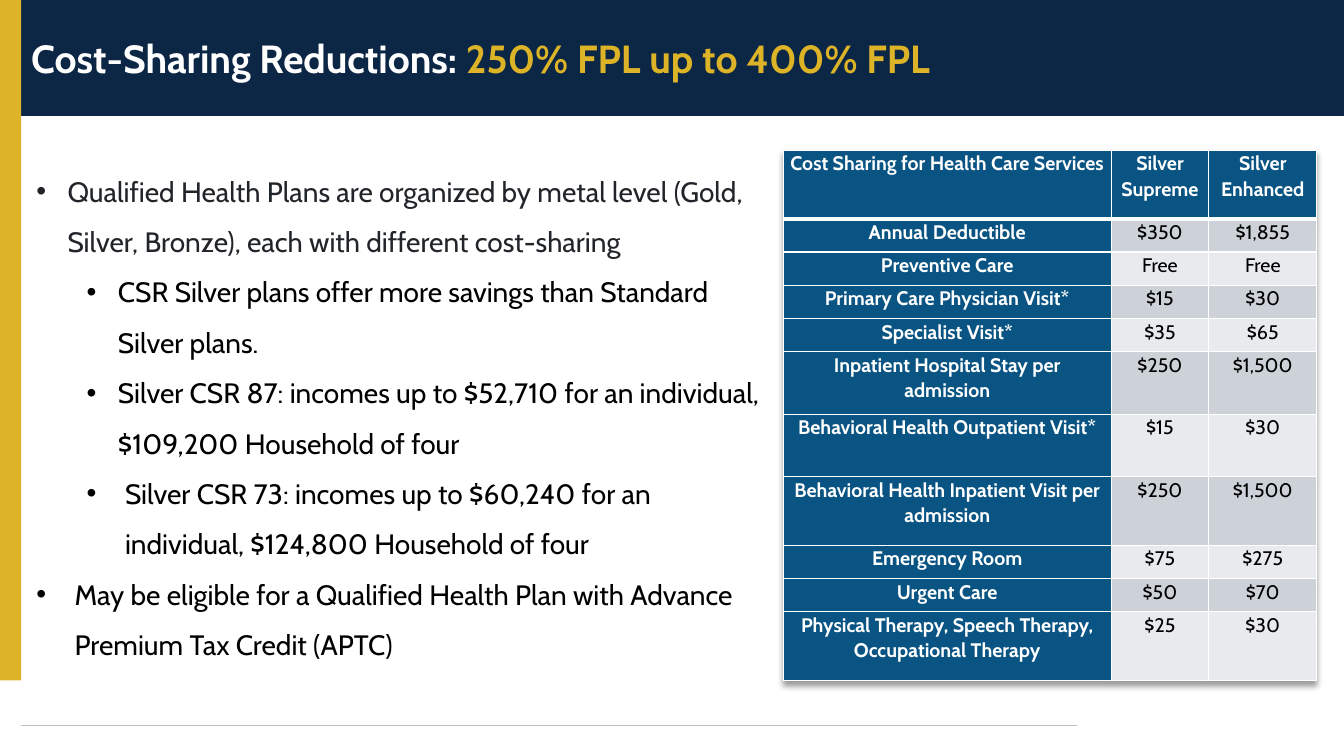
"""Build the slide on cost-sharing reductions with its plan table."""
import pptx
import pptx.util
import pptx.dml.color
import pptx.enum.shapes
import pptx.enum.text
import pptx.oxml
import pptx.oxml.ns
from dataclasses import dataclass
from lxml import etree

HEAD = ["Cost-Sharing Reductions: ", "250% FPL up to 400% FPL"]
POINTS = [
    (0, 0.31, 0.31, "Qualified Health Plans are organized by metal level (Gold, Silver, Bronze), "
     "each with different cost-sharing"),
    (1, 0.81, 0.31, "CSR Silver plans offer more savings than Standard Silver plans."),
    (1, 0.81, 0.31, "Silver CSR 87: incomes up to $52,710 for an individual, $109,200 Household of four"),
    (1, 0.88, 0.38, "Silver CSR 73: incomes up to $60,240 for an individual, $124,800 Household of four"),
    (0, 0.38, 0.38, "May be eligible for a Qualified Health Plan with Advance Premium Tax Credit (APTC)"),
]
COSTS = [
    (0.68, "Cost Sharing for Health Care Services", "Silver Supreme", "Silver Enhanced"),
    (0.33, "Annual Deductible", "$350", "$1,855"),
    (0.33, "Preventive Care", "Free", "Free"),
    (0.33, "Primary Care Physician Visit*", "$15", "$30"),
    (0.33, "Specialist Visit*", "$35", "$65"),
    (0.62, "Inpatient Hospital Stay per admission", "$250", "$1,500"),
    (0.62, "Behavioral Health Outpatient Visit*", "$15", "$30"),
    (0.68, "Behavioral Health Inpatient Visit per admission", "$250", "$1,500"),
    (0.33, "Emergency Room", "$75", "$275"),
    (0.33, "Urgent Care", "$50", "$70"),
    (0.68, "Physical Therapy, Speech Therapy, Occupational Therapy", "$25", "$30"),
]
COLS = (3.25, 0.97, 1.07)
WIDE, HIGH = 13.33, 7.5
EDGE, BAND = 0.21, 1.15


@dataclass
class Theme:
    font: str = "Cabin"
    navy: str = "0C2645"
    gold: str = "DDB427"
    blue: str = "0A5483"
    dark: str = "CCD2D8"
    light: str = "E8EAED"
    rule: str = "BFBFBF"
    ink: str = "212529"
    black: str = "000000"
    white: str = "FFFFFF"
    title: int = 28
    body: int = 20
    cell: int = 14


theme = Theme()
inch, pt = pptx.util.Inches, pptx.util.Pt
align = pptx.enum.text.PP_ALIGN
qn = pptx.oxml.ns.qn
NS = 'xmlns:a="http://schemas.openxmlformats.org/drawingml/2006/main"'


def rgb(tone):
    return pptx.dml.color.RGBColor.from_string(tone)


def style(font, size, tone, bold=False):
    font.name, font.size, font.bold = theme.font, pt(size), bold
    font.color.rgb = rgb(tone)


def place(shape, *box):
    shape.left, shape.top, shape.width, shape.height = map(inch, box)


def lift(shape):
    shape.element.getparent().append(shape.element)


def add_bar(slide, tone, *box):
    kind = pptx.enum.shapes.MSO_SHAPE.RECTANGLE
    bar = slide.shapes.add_shape(kind, *map(inch, box))
    bar.shadow.inherit = False
    bar.fill.solid()
    bar.fill.fore_color.rgb = rgb(tone)
    bar.line.fill.background()


def add_rule(slide):
    kind = pptx.enum.shapes.MSO_CONNECTOR.STRAIGHT
    low = HIGH * 0.96
    rule = slide.shapes.add_connector(kind, inch(EDGE), inch(low), inch(10.68), inch(low))
    rule.line.color.rgb = rgb(theme.rule)
    rule.line.width = pt(1)
    etree.SubElement(rule.element.spPr, qn("a:effectLst"))


def fill_title(title):
    place(title, EDGE, 0.11, 12.92, 0.93)
    frame = title.text_frame
    frame.word_wrap = True
    frame.auto_size = pptx.enum.text.MSO_AUTO_SIZE.NONE
    frame.vertical_anchor = pptx.enum.text.MSO_ANCHOR.MIDDLE
    line = frame.paragraphs[0]
    line.alignment = align.LEFT
    for text, tone in zip(HEAD, (theme.white, theme.gold)):
        run = line.add_run()
        run.text = text
        style(run.font, theme.title, tone, True)


def fill_body(body):
    place(body, 0.26, 1.51, 7.46, 5.1)
    frame = body.text_frame
    frame.word_wrap = True
    frame.auto_size = pptx.enum.text.MSO_AUTO_SIZE.SHAPE_TO_FIT_TEXT
    for at, (level, left, hang, text) in enumerate(POINTS):
        line = frame.add_paragraph() if at else frame.paragraphs[0]
        line.text, line.level = text, level
        props = line._p.get_or_add_pPr()
        props.set("marL", str(inch(left)))
        props.set("indent", str(-inch(hang)))
        etree.SubElement(props, qn("a:buFont"), typeface="Arial")
        etree.SubElement(props, qn("a:buChar"), char="•")
        line.line_spacing, line.space_before = 1.5, pt(0)
        line.alignment = align.LEFT
        style(line.font, theme.body, theme.black if at else theme.ink)


def add_border(cell, row):
    props = cell._tc.get_or_add_tcPr()
    wide = {"L": 1, "R": 1, "T": 3 if row == 1 else 1, "B": 1 if row else 3}
    for side, width in wide.items():
        props.append(pptx.oxml.parse_xml(
            f'<a:ln{side} {NS} w="{pt(width)}"><a:solidFill>'
            f'<a:srgbClr val="{theme.white}"/></a:solidFill></a:ln{side}>'))


def fill_cell(cell, row, col, text):
    key = row == 0 or col == 0
    add_border(cell, row)
    cell.fill.solid()
    cell.fill.fore_color.rgb = rgb(theme.blue if key else theme.dark if row % 2 else theme.light)
    cell.margin_left = cell.margin_right = inch(0.07)
    cell.margin_top = cell.margin_bottom = 0
    cell.text = text
    line = cell.text_frame.paragraphs[0]
    line.alignment, line.line_spacing, line.space_after = align.CENTER, 1.07, pt(8)
    style(line.font, theme.cell, theme.white if key else theme.black, key)


def add_costs(slide):
    high = sum(row[0] for row in COSTS)
    box = map(inch, (7.77, 1.49, sum(COLS), high))
    table = slide.shapes.add_table(len(COSTS), len(COLS), *box).table
    table._tbl.tblPr.insert(0, pptx.oxml.parse_xml(
        f'<a:effectLst {NS}><a:outerShdw blurRad="{pt(4)}" dist="{pt(3)}" dir="5400000">'
        f'<a:srgbClr val="{theme.black}"><a:alpha val="40000"/></a:srgbClr>'
        '</a:outerShdw></a:effectLst>'))
    for col, wide in enumerate(COLS):
        table.columns[col].width = inch(wide)
    for row, (tall, *texts) in enumerate(COSTS):
        table.rows[row].height = inch(tall)
        for col, text in enumerate(texts):
            fill_cell(table.cell(row, col), row, col, text)


def main():
    deck = pptx.Presentation()
    deck.slide_width, deck.slide_height = inch(WIDE), inch(HIGH)
    slide = deck.slides.add_slide(deck.slide_layouts[1])
    title, body = slide.placeholders
    add_bar(slide, theme.navy, EDGE, 0, WIDE - EDGE, BAND)
    fill_title(title)
    lift(title)
    add_rule(slide)
    add_bar(slide, theme.gold, 0, 0, EDGE, HIGH * 0.9)
    fill_body(body)
    lift(body)
    add_costs(slide)
    deck.save("out.pptx")


if __name__ == "__main__":
    main()
